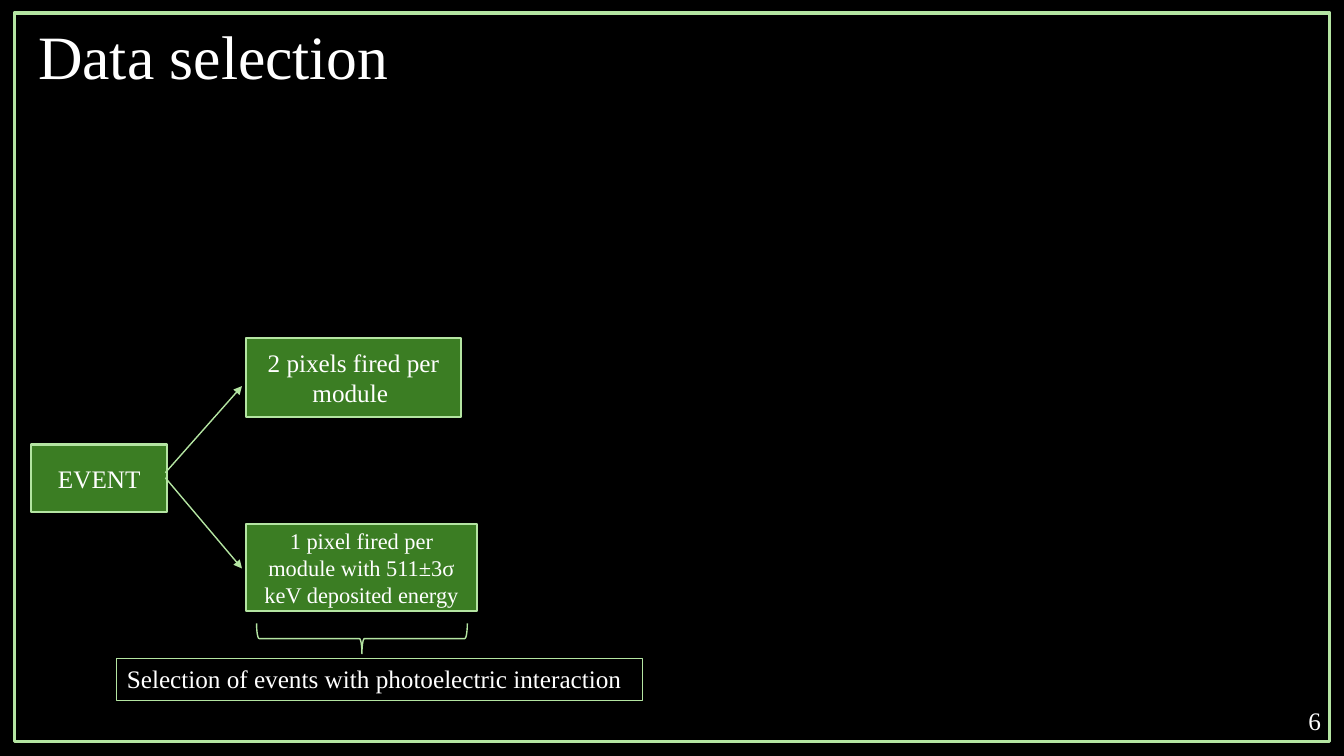
from lxml import etree
from pptx import Presentation
from pptx.dml.color import RGBColor
from pptx.enum.shapes import MSO_CONNECTOR, MSO_SHAPE as Preset
from pptx.enum.text import MSO_ANCHOR as Anchor, PP_ALIGN as Align
from pptx.oxml.ns import qn
from pptx.util import Inches, Pt

COLORS = {"background": "000000", "box": "3B7D23", "outline": "B4E5A2", "text": "FFFFFF"}
FONT = "Times New Roman"


def color(name):
    return RGBColor.from_string(COLORS[name])


def inches(box):
    return [Inches(length) for length in box]


def write(frame, text, size, align=Align.LEFT, anchor=Anchor.MIDDLE):
    frame.word_wrap = True
    frame.vertical_anchor = anchor
    paragraph = frame.paragraphs[0]
    paragraph.text = text
    paragraph.alignment = align
    paragraph.font.size = Pt(size)
    paragraph.font.name = FONT
    paragraph.font.color.rgb = color("text")
    return paragraph


def add_outline(slide, preset, box, width, fill=None):
    outline = slide.shapes.add_shape(preset, *inches(box))
    outline.shadow.inherit = False
    outline.line.color.rgb = color("outline")
    outline.line.width = Pt(width)
    if fill:
        outline.fill.solid()
        outline.fill.fore_color.rgb = color(fill)
    else:
        outline.fill.background()
    return outline


def add_step(slide, box, text, size=18):
    step = add_outline(slide, Preset.FLOWCHART_PROCESS, box, 1.5, "box")
    write(step.text_frame, text, size, Align.CENTER)


def add_arrow(slide, start, end):
    arrow = slide.shapes.add_connector(MSO_CONNECTOR.STRAIGHT, *inches(start + end))
    arrow.line.color.rgb = color("outline")
    arrow.line.width = Pt(1)
    etree.SubElement(arrow.line._get_or_add_ln(), qn("a:tailEnd"), type="triangle")
    etree.SubElement(arrow._element.spPr, qn("a:effectLst"))


def add_frame(slide, box):
    left, top, width, height = box
    add_outline(slide, Preset.RECTANGLE, box, 2.25)
    # Title in the top left corner
    title = slide.shapes.add_textbox(*inches((left + 0.14, top + 0.01, 3.81, 0.9)))
    write(title.text_frame, "Data selection", 44).line_spacing = 0.9
    # Page number in the bottom right corner
    number = slide.shapes.add_textbox(
        *inches((left + width - 2.92, top + height - 0.41, 2.93, 0.4)))
    write(number.text_frame, "6", 18, Align.RIGHT)


def add_event_tree(slide, box):
    left, top, width, height = box
    branch_left = left + 2.13
    # Event and its two branches
    add_step(slide, (left, top + 1.06, 1.35, 0.67), "EVENT")
    add_step(slide, (branch_left, top, 2.13, 0.79), "2 pixels fired per module ")
    add_step(slide, (branch_left, top + height - 0.86, width - 2.13, 0.86),
             "1 pixel fired per module with 511±3σ keV deposited energy", 16)
    # Arrows from the event to the branches
    for start_y, end_y in ((1.34, 0.48), (1.39, 2.29)):
        add_arrow(slide, (left + 1.33, top + start_y), (branch_left - 0.04, top + end_y))


def add_selection_note(slide, box):
    left, top, width, height = box
    # Brace turned to point down at the note
    brace = add_outline(slide, Preset.LEFT_BRACE, (left + 2.28, top - 1.24, 0.3, 2.09), 1)
    brace.rotation = 270
    note = add_outline(slide, Preset.RECTANGLE, (left, top, width, height), 0.75)
    write(note.text_frame, "Selection of events with photoelectric interaction", 18,
          anchor=Anchor.TOP)


def main():
    deck = Presentation()
    deck.slide_width, deck.slide_height = Inches(13.33), Inches(7.5)
    slide = deck.slides.add_slide(deck.slide_layouts[6])
    slide.background.fill.solid()
    slide.background.fill.fore_color.rgb = color("background")
    add_frame(slide, (0.14, 0.13, 13.05, 7.23))
    add_event_tree(slide, (0.31, 3.35, 4.42, 2.71))
    add_selection_note(slide, (1.16, 6.53, 5.21, 0.42))
    deck.save("out.pptx")


if __name__ == "__main__":
    main()
